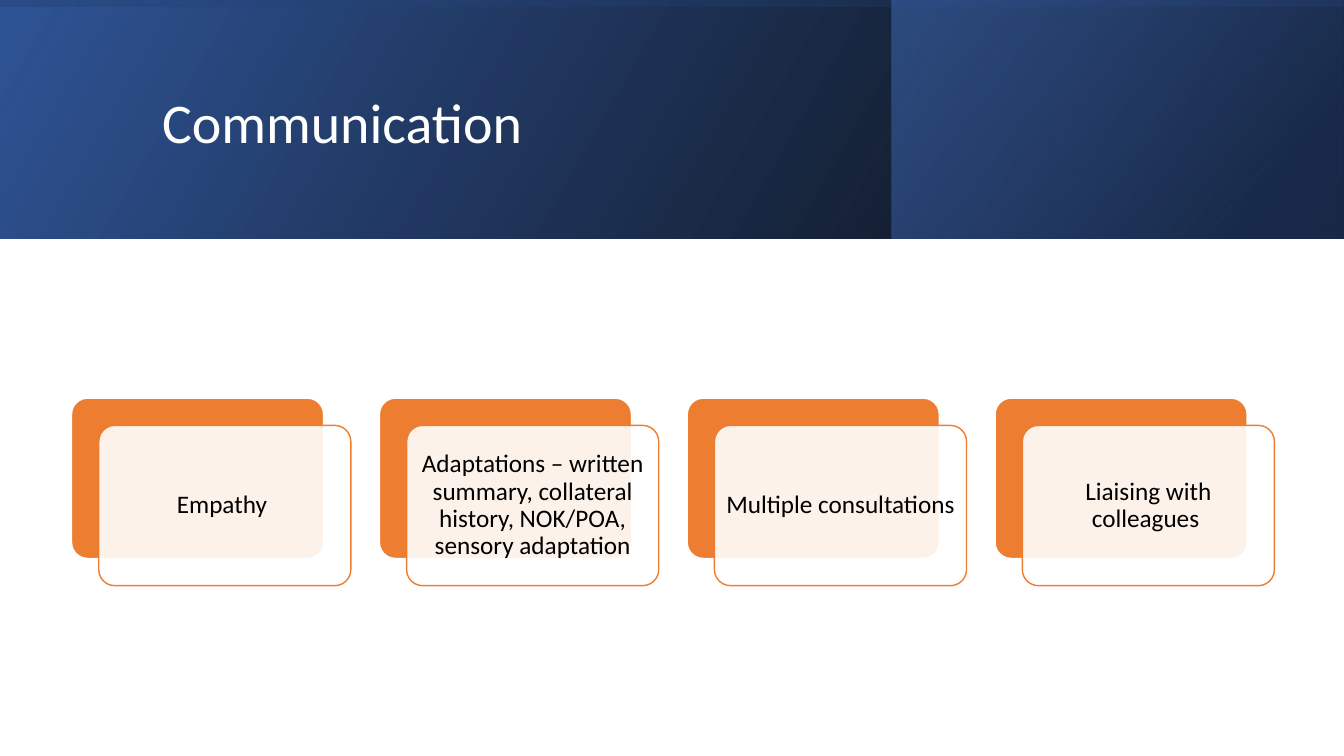
from lxml.etree import SubElement
from pptx import Presentation
from pptx.dml.color import RGBColor as RGB
from pptx.enum.shapes import MSO_SHAPE as Kind
from pptx.enum.text import MSO_ANCHOR as Anchor, PP_ALIGN as Align
from pptx.oxml.ns import qn
from pptx.util import Inches, Pt


def color(code):
    return RGB.from_string(code)


def add_tint(parent, code, alpha):
    tint = SubElement(parent, qn("a:srgbClr"), val=code)
    SubElement(tint, qn("a:alpha"), val=str(alpha * 1000))


class Deck:
    font = "Calibri"
    white, black, orange = "FFFFFF", "000000", "ED7D31"

    def __init__(self, width, height):
        self.prs = Presentation()
        self.prs.slide_width, self.prs.slide_height = Inches(width), Inches(height)
        self.slide = self.prs.slides.add_slide(self.prs.slide_layouts[6])

    def shape(self, kind, box):
        shape = self.slide.shapes.add_shape(kind, *map(Inches, box))
        shape.shadow.inherit = False
        return shape

    def band(self, box, stops, angle, turn=0):
        """Mirrored rectangle with a gradient; angle runs clockwise."""
        band = self.shape(Kind.RECTANGLE, box)
        band.rotation = turn
        band.line.fill.background()
        band.fill.gradient()
        band.fill.gradient_angle = 360 - angle
        props = band._element.spPr
        props.find(qn("a:xfrm")).set("flipH", "1")
        ramp = props.find(qn("a:gradFill")).find(qn("a:gsLst"))
        for old in list(ramp):
            ramp.remove(old)
        for pos, code, alpha in stops:
            add_tint(SubElement(ramp, qn("a:gs"), pos=str(pos * 1000)), code, alpha)

    def panel(self, box, fill, line, alpha=100):
        panel = self.shape(Kind.ROUNDED_RECTANGLE, box)
        panel.adjustments[0] = 0.1
        panel.fill.solid()
        panel.fill.fore_color.rgb = color(fill)
        panel.line.color.rgb = color(line)
        panel.line.width = Pt(1)
        if alpha < 100:
            solid = panel._element.spPr.find(qn("a:solidFill"))
            solid.remove(solid[0])
            add_tint(solid, fill, alpha)
        return panel

    def label(self, shape, text, size, code, align, pads):
        frame = shape.text_frame
        sides = ("margin_left", "margin_top", "margin_right", "margin_bottom")
        look = dict(zip(sides, map(Inches, pads)))
        look.update(word_wrap=True, vertical_anchor=Anchor.MIDDLE)
        for name, value in look.items():
            setattr(frame, name, value)
        para = frame.paragraphs[0]
        para.alignment, para.line_spacing = align, 0.9
        run = para.add_run()
        run.text = text
        for name, value in {"name": self.font, "size": Pt(size)}.items():
            setattr(run.font, name, value)
        run.font.color.rgb = color(code)

    def title(self, box, text):
        area = self.slide.shapes.add_textbox(*map(Inches, box))
        self.label(area, text, 40, self.white, Align.LEFT, (0.1, 0.05, 0.1, 0.05))

    def card(self, left, top, text):
        """Orange panel with a pale, shifted panel in front."""
        width, height, shift = 2.5, 1.59, 0.27
        self.panel((left, top, width, height), self.orange, self.white)
        front = self.panel((left + shift, top + shift, width, height),
                           self.white, self.orange, 90)
        self.label(front, text, 18, self.black, Align.CENTER, (0.07,) * 4)


def main():
    wide, tall = 13.33, 2.37
    deck = Deck(wide, 7.5)

    # Header bands
    deck.band((0, 0, wide, tall), [(0, "000000", 96), (100, "2F5496", 100)], 330)
    deck.band((8.84, 0, 4.48, tall),
              [(0, "1F3864", 68), (19, "1F3864", 68), (100, "4472C4", 48)], 320)
    deck.band(((wide - tall) / 2, (tall - wide) / 2, tall, wide),
              [(0, "2F5496", 16), (23, "2F5496", 16),
               (99, "000000", 45), (100, "000000", 45)], 350, 270)
    deck.title((1.51, 0.38, 10.63, 1.72), "Communication")

    # Row of cards
    topics = ["Empathy ",
              "Adaptations – written summary, collateral history, NOK/POA, "
              "sensory adaptation",
              "Multiple consultations",
              "Liaising with colleagues "]
    first, last = 0.71, 9.87
    step = (last - first) / (len(topics) - 1)
    for i, topic in enumerate(topics):
        deck.card(first + i * step, 3.95, topic)

    deck.prs.save("out.pptx")


if __name__ == "__main__":
    main()
